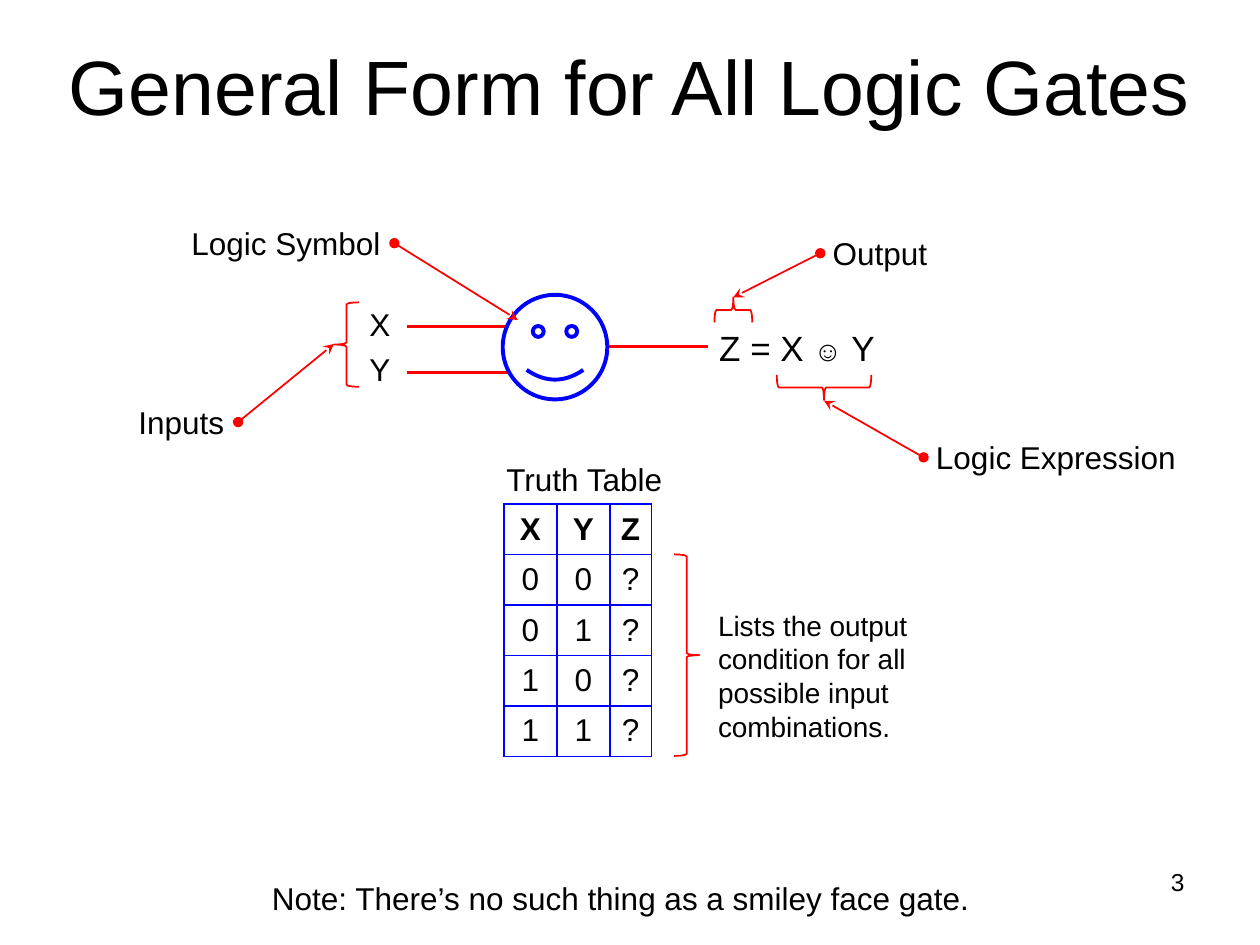
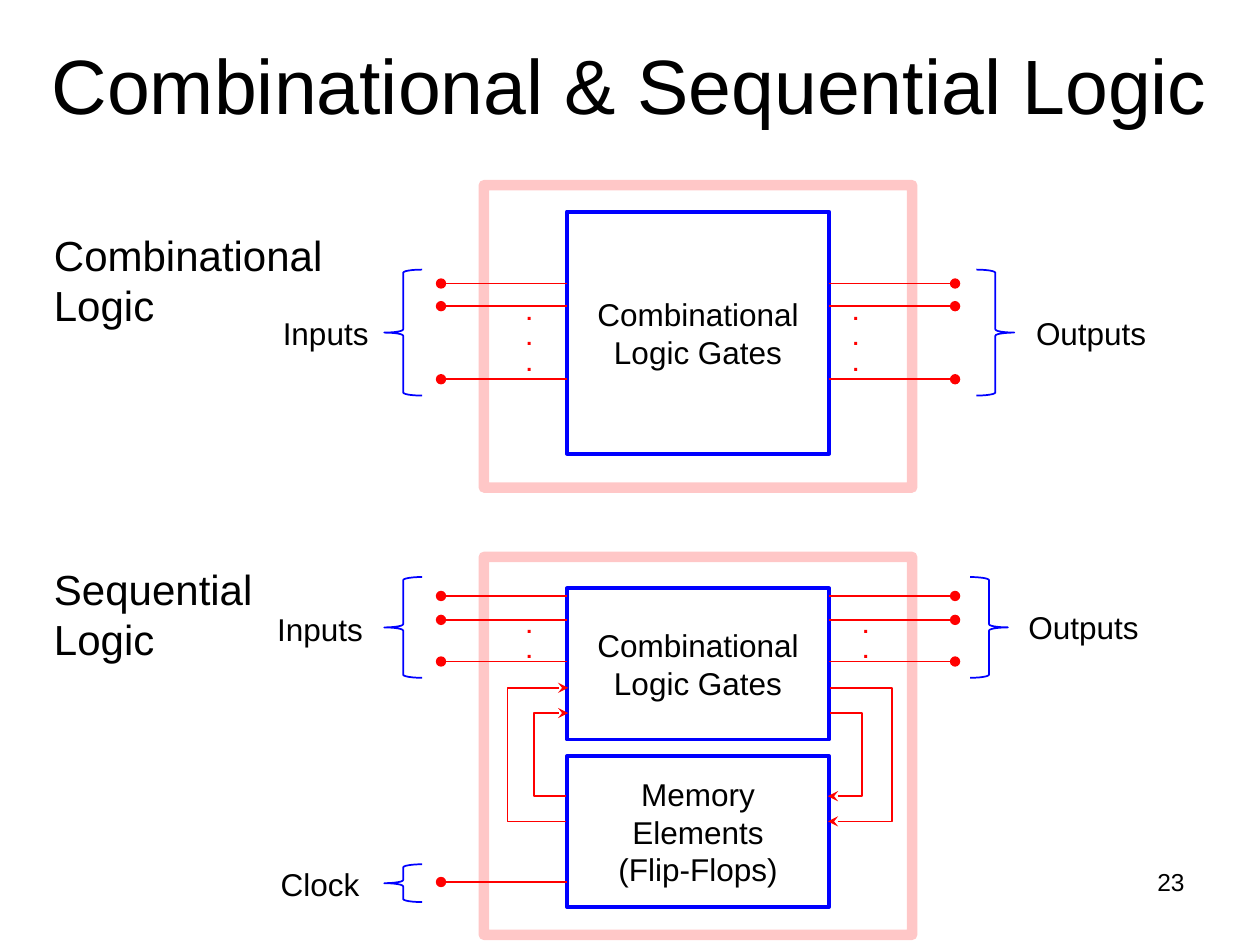
"""Build two slides on logic gates and on combinational and sequential logic."""
import pptx
import pptx.util
from pptx.dml.color import RGBColor
from pptx.enum.shapes import MSO_CONNECTOR, MSO_SHAPE
from pptx.enum.text import MSO_ANCHOR, MSO_AUTO_SIZE, PP_ALIGN
from pptx.oxml.ns import qn
from lxml import etree

PX = 9144
FONT = "Arial"
COLORS = {"text": "000000", "signal": "FF0000", "gate": "0000FF", "cell": "FFFFFF"}
LEFT, CENTER, RIGHT = PP_ALIGN.LEFT, PP_ALIGN.CENTER, PP_ALIGN.RIGHT


def px(*values):
    """Turn px lengths into EMU."""
    return [pptx.util.Emu(v * PX) for v in values]


def rgb(name):
    """Return a named colour."""
    return RGBColor.from_string(COLORS[name])


def sub(parent, tag, **attrs):
    """Append a child element."""
    return etree.SubElement(parent, qn(tag), attrs)


def add_runs(p, runs, align, color="text", bold=False):
    """Fill a paragraph with (text, size) runs."""
    p.alignment = align
    for text, size in runs:
        r = p.add_run()
        r.text = text
        r.font.name = FONT
        r.font.size = pptx.util.Pt(size)
        r.font.bold = bold
        r.font.color.rgb = rgb(color)


def add_lines(tf, lines, size, align, color="text", bold=False):
    """Write one paragraph per line of text."""
    for i, text in enumerate(lines):
        p = tf.add_paragraph() if i else tf.paragraphs[0]
        add_runs(p, [(text, size)], align, color, bold)


def add_label(s, box, lines, size=18, align=LEFT, wrap=False, color="text", bold=False):
    """Add a text box and return its frame."""
    tf = s.shapes.add_textbox(*px(*box)).text_frame
    tf.word_wrap = wrap
    add_lines(tf, lines, size, align, color, bold)
    return tf


def add_outline(s, kind, box, color, width, rotation=0):
    """Add an unfilled preset shape."""
    sp = s.shapes.add_shape(kind, *px(*box))
    sp.shadow.inherit = False
    sp.fill.background()
    sp.line.color.rgb = rgb(color)
    sp.line.width = pptx.util.Pt(width)
    sp.rotation = rotation
    return sp


def add_brace(s, box, color, opens_left=False, rotation=0):
    """Add a thin brace."""
    kind = MSO_SHAPE.RIGHT_BRACE if opens_left else MSO_SHAPE.LEFT_BRACE
    add_outline(s, kind, box, color, 1, rotation)


def add_line(s, start, end, width=1, head=None, tail=None, via=None):
    """Add a signal line, bent at x = via if that is given."""
    kind = MSO_CONNECTOR.STRAIGHT if via is None else MSO_CONNECTOR.ELBOW
    c = s.shapes.add_connector(kind, *px(*start, *end))
    c.line.color.rgb = rgb("signal")
    c.line.width = pptx.util.Pt(width)
    ln = c.line._get_or_add_ln()
    for tag, end_type in (("a:headEnd", head), ("a:tailEnd", tail)):
        if end_type:
            sub(ln, tag, type=end_type)
    sppr = c._element.spPr
    sub(sppr, "a:effectLst")
    if via is not None:
        geom = sppr.find(qn("a:prstGeom"))
        for old in geom.findall(qn("a:avLst")):
            geom.remove(old)
        bend = round(100000 * (via - start[0]) / (end[0] - start[0]))
        sub(sub(geom, "a:avLst"), "a:gd", name="adj1", fmla=f"val {bend}")


def add_pointer(s, start, end):
    """Add a callout arrow."""
    add_line(s, start, end, head="oval", tail="stealth")


def add_block(s, box, lines):
    """Add a captioned logic block."""
    tf = add_outline(s, MSO_SHAPE.RECTANGLE, box, "gate", 2.25).text_frame
    tf.word_wrap = True
    tf.vertical_anchor = MSO_ANCHOR.MIDDLE
    add_lines(tf, lines, 18, CENTER)


def add_frame(s, top, height):
    """Add the translucent frame around a circuit."""
    sp = add_outline(s, MSO_SHAPE.RECTANGLE, (384, top, 340, height), "signal", 6)
    clr = sp.line._get_or_add_ln().find(".//" + qn("a:srgbClr"))
    sub(clr, "a:alpha", val="21000")


def add_wires(s, ys, dots_top, dot_count, right_dots_x):
    """Add input and output wires with the dots between them."""
    for y in ys:
        add_line(s, (450, y), (350, y), tail="oval")
        add_line(s, (758, y), (658, y), head="oval")
    for x in (408, right_dots_x):
        add_label(s, (x, dots_top, 25, 21 * dot_count + 8), ["."] * dot_count, 12,
                  color="signal", bold=True)


def border_cell(cell):
    """Draw blue borders around a table cell."""
    tcpr = cell._tc.get_or_add_tcPr()
    for i, tag in enumerate(("a:lnL", "a:lnR", "a:lnT", "a:lnB")):
        ln = etree.Element(qn(tag), w="12700")
        sub(sub(ln, "a:solidFill"), "a:srgbClr", val=COLORS["gate"])
        tcpr.insert(i, ln)


def add_truth_table(s, x, y, widths, row_height, rows):
    """Add a truth table whose first row is its header."""
    size = (sum(widths), row_height * len(rows))
    table = s.shapes.add_table(len(rows), len(widths), *px(x, y, *size)).table
    for col, width in zip(table.columns, widths):
        col.width = px(width)[0]
    for i, values in enumerate(rows):
        table.rows[i].height = px(row_height)[0]
        for j, value in enumerate(values):
            cell = table.cell(i, j)
            cell.margin_left = cell.margin_right = px(3)[0]
            cell.vertical_anchor = MSO_ANCHOR.MIDDLE
            cell.fill.solid()
            cell.fill.fore_color.rgb = rgb("cell")
            add_runs(cell.text_frame.paragraphs[0], [(value, 18)], CENTER, bold=i == 0)
            border_cell(cell)


def add_slide(prs, title, box, number):
    """Add a slide with its title and number."""
    s = prs.slides.add_slide(prs.slide_layouts[5])
    sp = s.shapes.title
    sp.left, sp.top, sp.width, sp.height = px(*box)
    tf = sp.text_frame
    tf.auto_size = MSO_AUTO_SIZE.NONE
    tf.vertical_anchor = MSO_ANCHOR.MIDDLE
    add_lines(tf, [title], 44, CENTER)
    add_label(s, (717, 683, 233, 52), [number], 14, RIGHT, True)
    return s


def build_general_form(prs):
    """Build the slide on the general form of a gate."""
    s = add_slide(prs, "General Form for All Logic Gates", (25, 5, 950, 125), "3")
    add_truth_table(s, 400, 400, (42, 42, 33), 38, ("XYZ", "00?", "01?", "10?", "11?"))

    for name, top, wire_y in (("X", 237, 259), ("Y", 273, 296)):
        add_label(s, (283, top, 37, 40), [name], align=CENTER)
        add_line(s, (323, wire_y), (403, wire_y), 1.75)
    add_line(s, (482, 275), (562, 275), 1.75)
    add_outline(s, MSO_SHAPE.SMILEY_FACE, (399, 234, 83, 83), "gate", 2.25)
    tf = add_label(s, (549, 254, 167, 44), [], wrap=True)
    add_runs(tf.paragraphs[0], [("Z = X ", 20), ("☺", 16), (" Y", 20)], CENTER)

    for text, box in (
        ("Logic Symbol", (142, 173, 172, 40)),
        ("Inputs", (100, 315, 89, 40)),
        ("Logic Expression", (733, 343, 212, 40)),
        ("Output", (651, 181, 96, 40)),
        ("Truth Table", (392, 360, 158, 40)),
        ("Note: There’s no such thing as a smiley face gate.", (206, 693, 579, 40)),
    ):
        add_label(s, box, [text])
    add_label(s, (560, 478, 208, 117),
              ["Lists the output condition for all", "possible input combinations."],
              16, wrap=True)

    for start, end in (
        ((313, 193), (411, 254)),
        ((189, 335), (265, 273)),
        ((733, 363), (654, 318)),
        ((651, 201), (582, 236)),
    ):
        add_pointer(s, start, end)
    add_brace(s, (265, 240, 20, 67), "signal")
    add_brace(s, (644, 270, 20, 75), "signal", rotation=270)
    add_brace(s, (572, 231, 20, 30), "signal", rotation=90)
    add_brace(s, (535, 440, 20, 160), "signal", opens_left=True)


def build_logic_kinds(prs):
    """Build the slide that compares the two kinds of logic."""
    s = add_slide(prs, "Combinational & Sequential Logic", (0, 0, 1000, 133), "23")
    gates = ["Combinational", "Logic Gates"]

    add_block(s, (450, 168, 208, 192), gates)
    add_wires(s, (225, 243, 301), 233, 3, 667)
    add_block(s, (450, 467, 208, 120), gates)
    add_block(s, (450, 600, 208, 120), ["Memory Elements", "(Flip-Flops)"])
    add_wires(s, (473, 492, 525), 481, 2, 675)
    add_line(s, (450, 700), (350, 700), tail="oval")

    for memory_y, gates_y, left_x, right_x in ((632, 566, 424, 684), (652, 546, 403, 708)):
        add_line(s, (449, memory_y), (451, gates_y), tail="stealth", via=left_x)
        add_line(s, (657, memory_y), (659, gates_y), head="stealth", via=right_x)

    for x, y, height, opens_left in (
        (305, 214, 100, False), (775, 214, 100, True),
        (305, 458, 80, False), (770, 458, 80, True), (305, 686, 30, False),
    ):
        add_brace(s, (x, y, 30, height), "gate", opens_left)
    for text, x, y, width in (
        ("Inputs", 200, 244, 117), ("Outputs", 807, 244, 118),
        ("Inputs", 208, 479, 92), ("Outputs", 801, 478, 118), ("Clock", 208, 682, 92),
    ):
        add_label(s, (x, y, width, 40), [text], align=CENTER, wrap=True)

    add_frame(s, 147, 240)
    add_frame(s, 442, 300)
    add_label(s, (33, 177, 234, 90), ["Combinational", "Logic"], 24)
    add_label(s, (33, 442, 178, 90), ["Sequential", "Logic"], 24)


def main():
    """Build and save the presentation."""
    prs = pptx.Presentation()
    prs.slide_width, prs.slide_height = px(1000, 750)
    build_general_form(prs)
    build_logic_kinds(prs)
    prs.save("out.pptx")


if __name__ == "__main__":
    main()
